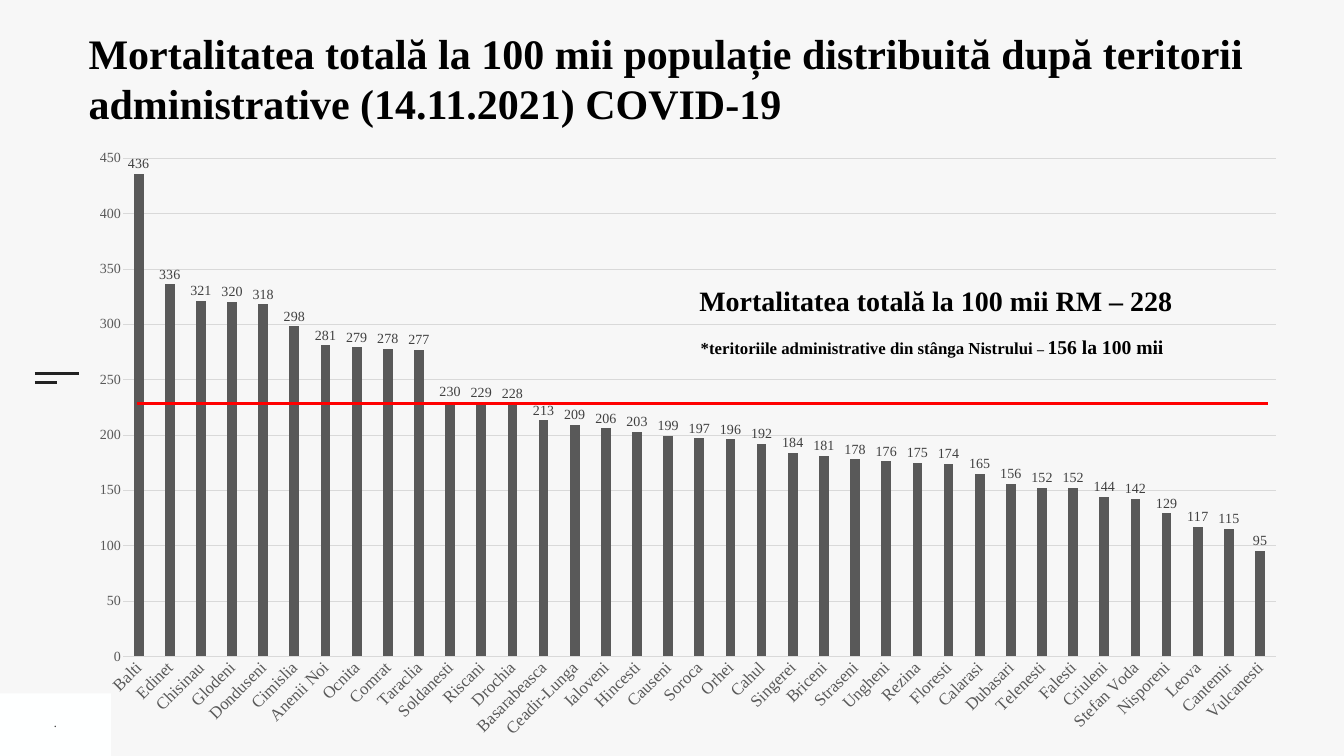
from lxml import etree
from pptx import Presentation
from pptx.chart.data import CategoryChartData
from pptx.dml.color import RGBColor
from pptx.enum.chart import XL_CHART_TYPE, XL_LABEL_POSITION, XL_TICK_MARK
from pptx.enum.shapes import MSO_CONNECTOR, MSO_SHAPE
from pptx.enum.text import MSO_ANCHOR, MSO_AUTO_SIZE, PP_ALIGN
from pptx.oxml import parse_xml
from pptx.oxml.ns import nsdecls, qn
from pptx.util import Inches, Pt

COLUMN = XL_CHART_TYPE.COLUMN_CLUSTERED
OUTSIDE_END = XL_LABEL_POSITION.OUTSIDE_END
NO_TICK = XL_TICK_MARK.NONE
STRAIGHT = MSO_CONNECTOR.STRAIGHT
RECTANGLE = MSO_SHAPE.RECTANGLE
MIDDLE = MSO_ANCHOR.MIDDLE
FIT_SHAPE = MSO_AUTO_SIZE.SHAPE_TO_FIT_TEXT
LEFT, CENTER = PP_ALIGN.LEFT, PP_ALIGN.CENTER

SERIF = "Times New Roman"
SANS = "Open Sans"
COLORS = {
    "background": "F7F7F7",
    "corner": "FEFFFF",
    "ink": "222222",
    "text": "000000",
    "bar": "595959",
    "axis": "595959",
    "label": "404040",
    "grid": "D9D9D9",
    "average": "FF0000",
}
MORTALITY = {
    "Balti": 436, "Edinet": 336, "Chisinau": 321, "Glodeni": 320,
    "Donduseni": 318, "Cimislia": 298, "Anenii Noi": 281, "Ocnita": 279,
    "Comrat": 278, "Taraclia": 277, "Soldanesti": 230, "Riscani": 229,
    "Drochia": 228, "Basarabeasca": 213, "Ceadir-Lunga": 209,
    "Ialoveni": 206, "Hincesti": 203, "Causeni": 199, "Soroca": 197,
    "Orhei": 196, "Cahul": 192, "Singerei": 184, "Briceni": 181,
    "Straseni": 178, "Ungheni": 176, "Rezina": 175, "Floresti": 174,
    "Calarasi": 165, "Dubasari": 156, "Telenesti": 152, "Falesti": 152,
    "Criuleni": 144, "Stefan Voda": 142, "Nisporeni": 129, "Leova": 117,
    "Cantemir": 115, "Vulcanesti": 95,
}
PLOT_AREA = {"x": 0.039, "y": 0.022, "w": 0.957, "h": 0.815}


def rgb(name):
    """Return the named colour."""
    return RGBColor.from_string(COLORS[name])


def set_font(font, size, color, name=SERIF, bold=False):
    """Apply the given format values to a font."""
    values = {"size": Pt(size), "name": name, "bold": bold}
    for key, value in values.items():
        setattr(font, key, value)
    font.color.rgb = rgb(color)


def set_line(line, color, width):
    """Give a line its colour and width."""
    line.color.rgb = rgb(color)
    line.width = Pt(width)


def add_line(slide, x1, x2, y, color, width):
    """Draw a horizontal line without a shadow."""
    line = slide.shapes.add_connector(
        STRAIGHT, Inches(x1), Inches(y), Inches(x2), Inches(y))
    set_line(line.line, color, width)
    etree.SubElement(line._element.spPr, qn("a:effectLst"))


def add_text(slide, box, runs, align=LEFT, wrap=True, color="text",
             name=SERIF, bold=True, **frame):
    """Add one paragraph made of (text, size) runs."""
    tf = slide.shapes.add_textbox(*map(Inches, box)).text_frame
    for key, value in {"word_wrap": wrap, "auto_size": FIT_SHAPE, **frame}.items():
        setattr(tf, key, value)
    p = tf.paragraphs[0]
    p.alignment = align
    for text, size in runs:
        r = p.add_run()
        r.text = text
        set_font(r.font, size, color, name, bold)


def add_footer_corner(slide, left, top, width, height):
    """Place the pale corner block with its page mark."""
    sp = slide.shapes.add_shape(
        RECTANGLE, *map(Inches, (left, top, width, height)))
    sp.shadow.inherit = False
    sp.fill.solid()
    sp.fill.fore_color.rgb = rgb("corner")
    sp.line.fill.background()
    margins = {f"margin_{side}": Inches(0.1)
               for side in ("left", "top", "right", "bottom")}
    add_text(slide, (left + 0.97, top + 0.35, 0.26, 0.47), [(".", 16)], CENTER,
             False, "ink", SANS, False, vertical_anchor=MIDDLE, **margins)


def add_menu_mark(slide, left, top):
    """Draw the long and short strokes at the left edge."""
    for length, offset in ((0.88, 0), (0.44, 0.18)):
        add_line(slide, left, left + length, top + offset, "ink", 3)


def set_plot_area(chart):
    """Fix the inner plot area as fractions of the chart."""
    plot_area = chart._chartSpace.chart.plotArea
    for layout in plot_area.findall(qn("c:layout")):
        plot_area.remove(layout)
    modes = "".join(f'<c:{k}Mode val="edge"/>' for k in "xy")
    sizes = "".join(f'<c:{k} val="{v}"/>' for k, v in PLOT_AREA.items())
    plot_area.insert(0, parse_xml(
        f'<c:layout {nsdecls("c")}><c:manualLayout>'
        f'<c:layoutTarget val="inner"/>{modes}{sizes}'
        '</c:manualLayout></c:layout>'))


def style_axes(chart):
    """Format the category and value axes."""
    cat, val = chart.category_axis, chart.value_axis
    for axis, size in ((cat, 24), (val, 20)):
        axis.major_tick_mark = axis.minor_tick_mark = NO_TICK
        set_font(axis.tick_labels.font, size, "axis")
    set_line(cat.format.line, "grid", 0.75)
    cat._element.txPr.find(qn("a:bodyPr")).set("rot", "-2700000")
    scale = {"minimum_scale": 0, "maximum_scale": 450, "major_unit": 50,
             "has_major_gridlines": True}
    for key, value in scale.items():
        setattr(val, key, value)
    val.format.line.fill.background()
    set_line(val.major_gridlines.format.line, "grid", 0.75)
    val.tick_labels.number_format = "0"
    val.tick_labels.number_format_is_linked = False


def add_mortality_chart(slide, left, top, width, height):
    """Add the column chart and the national average line."""
    data = CategoryChartData(number_format="0")
    data.categories = list(MORTALITY)
    data.add_series("Series 1", list(MORTALITY.values()))
    chart = slide.shapes.add_chart(
        COLUMN, *map(Inches, (left, top, width, height)), data).chart
    chart.has_legend = chart.has_title = False
    set_font(chart.font, 24, "text")
    plot = chart.plots[0]
    for key, value in {"gap_width": 219, "overlap": -27,
                       "vary_by_categories": False,
                       "has_data_labels": True}.items():
        setattr(plot, key, value)
    fill = plot.series[0].format.fill
    fill.solid()
    fill.fore_color.rgb = rgb("bar")
    labels = plot.data_labels
    for key, value in {"show_value": True, "position": OUTSIDE_END,
                       "number_format": "0",
                       "number_format_is_linked": False}.items():
        setattr(labels, key, value)
    set_font(labels.font, 20, "label")
    style_axes(chart)
    set_plot_area(chart)
    add_line(slide, left + 1.21, left + width - 0.25, top + 5.13, "average", 4.5)


def add_summary(slide, left, top):
    """Add the national figure and the note below it."""
    add_text(slide, (left + 1.84, top, 9.84, 0.77),
             [("Mortalitatea totală la 100 mii RM – 228 ", 40)], CENTER, False)
    add_text(slide, (left, top + 1.03, 13.33, 0.57),
             [("*teritoriile administrative din stânga Nistrului ", 24),
              ("– ", 20), ("156 la 100 mii ", 28)], CENTER)


def main():
    """Build the slide and save it."""
    prs = Presentation()
    prs.slide_width, prs.slide_height = Inches(26.67), Inches(15)
    slide = prs.slides.add_slide(prs.slide_layouts[6])
    slide.background.fill.solid()
    slide.background.fill.fore_color.rgb = rgb("background")
    add_footer_corner(slide, 0, 13.76, 2.2, 1.24)
    add_menu_mark(slide, 0.69, 7.41)
    add_mortality_chart(slide, 1.51, 2.87, 23.9, 12.13)
    add_text(slide, (1.66, 0.49, 23.27, 2.12),
             [("Mortalitatea totală la 100 mii populație distribuită după "
               "teritorii administrative (14.11.2021) COVID-19", 60)])
    add_summary(slide, 11.88, 5.57)
    prs.save("out.pptx")


if __name__ == "__main__":
    main()
